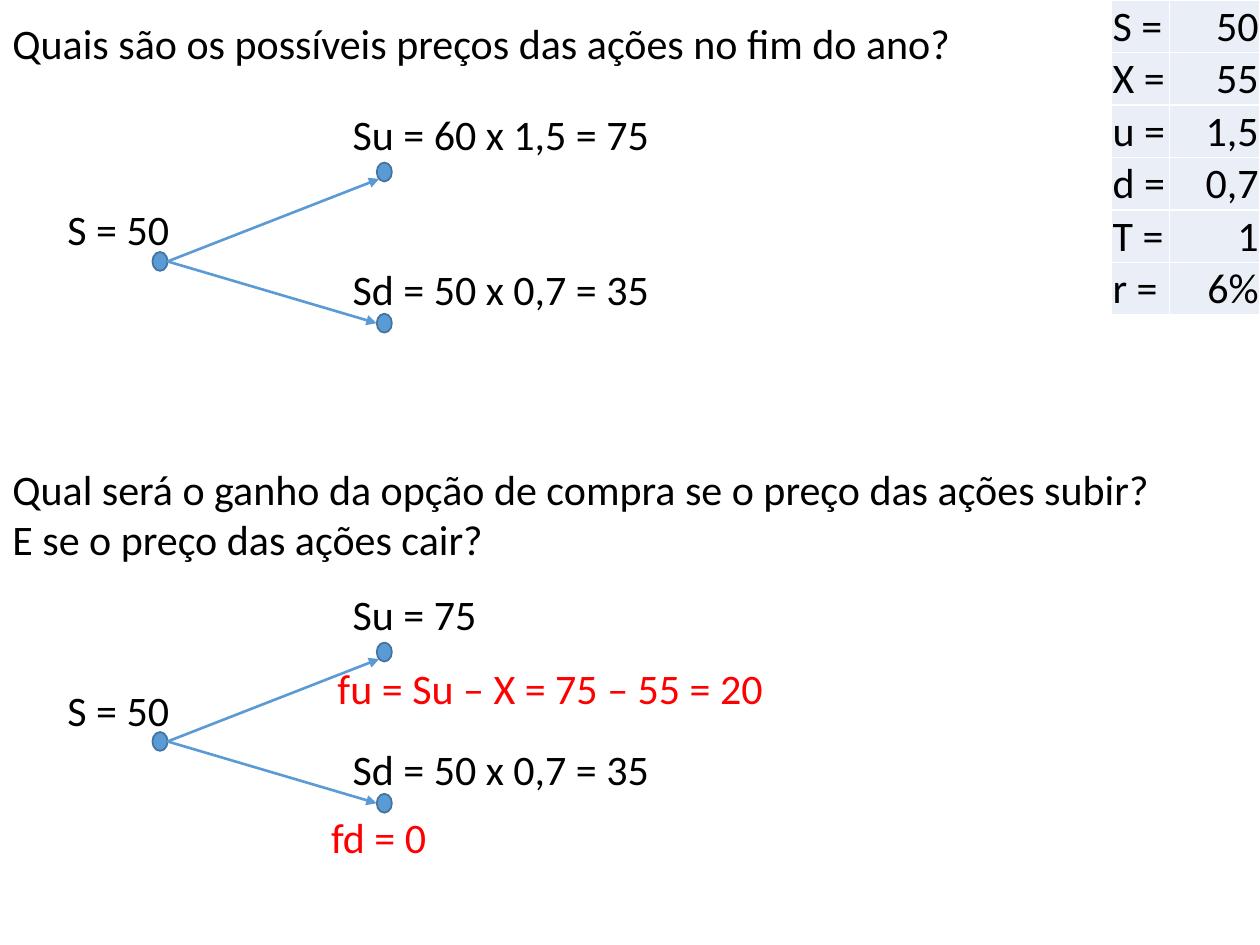
"""Build the slide on one-step binomial trees for share prices and call payoffs."""
import pptx
import pptx.dml.color
import pptx.enum.shapes
import pptx.enum.text
import pptx.oxml
import pptx.oxml.ns
import pptx.util

Inches, Pt = pptx.util.Inches, pptx.util.Pt
RGB = pptx.dml.color.RGBColor.from_string
ALIGN = pptx.enum.text.PP_ALIGN
SHAPE = pptx.enum.shapes.MSO_SHAPE

THEME = {
    "font": "Calibri", "size": 24, "text": "000000", "payoff": "FF0000",
    "node": "5B9BD5", "node_line": "43739E", "cell": "EAEFF7", "border": "FFFFFF",
}

PARAMETERS = [("S =", "50"), ("X =", "55"), ("u =", "1,5"),
              ("d =", "0,7"), ("T =", "1"), ("r =", "6%")]
QUESTIONS = [
    ("Quais são os possíveis preços das ações no fim do ano?", (0, 0.09, 8.29, 0.5)),
    ("Qual será o ganho da opção de compra se o preço das ações subir? "
     "E se o preço das ações cair?", (0, 3.63, 9.3, 0.91)),
]
TREES = [
    (0, "S = 50", "Su = 60 x 1,5 = 75", "Sd = 50 x 0,7 = 35"),
    (3.81, "S = 50", "Su = 75", "Sd = 50 x 0,7 = 35"),
]
PAYOFFS = [
    ("fu = Su – X = 75 – 55 = 20", (2.58, 5.21, 3.89, 0.5)),
    ("fd = 0", (2.53, 6.39, 1.29, 0.5)),
]

NODE = (0.12, 0.15)
ROOT, UP, DOWN = (1.21, 2), (2.99, 1.29), (2.99, 2.49)
COLUMNS = (0.46, 0.72)
ROW_HEIGHT = 0.41


def inches(values):
    return [Inches(v) for v in values]


def write(tf, text, color=THEME["text"], align=ALIGN.LEFT):
    tf.text = text
    p = tf.paragraphs[0]
    p.alignment = align
    font = p.runs[0].font
    font.name, font.size = THEME["font"], Pt(THEME["size"])
    font.color.rgb = RGB(color)


def add_text(s, text, box, **style):
    tf = s.shapes.add_textbox(*inches(box)).text_frame
    tf.word_wrap = True
    write(tf, text, **style)


def add_node(s, corner):
    sp = s.shapes.add_shape(SHAPE.OVAL, *inches(corner + NODE))
    sp.shadow.inherit = False
    sp.fill.solid()
    sp.fill.fore_color.rgb = RGB(THEME["node"])
    sp.line.color.rgb = RGB(THEME["node_line"])
    sp.line.width = Pt(1)


def add_arrow(s, start, end):
    line = s.shapes.add_connector(
        pptx.enum.shapes.MSO_CONNECTOR.STRAIGHT, *inches(start + end))
    line.line.color.rgb = RGB(THEME["node"])
    line.line.width = Pt(1.5)
    ln = line.line._get_or_add_ln()
    ns = pptx.oxml.ns.nsdecls("a")
    ln.append(pptx.oxml.parse_xml(f'<a:tailEnd {ns} type="triangle"/>'))
    ln.addnext(pptx.oxml.parse_xml(f"<a:effectLst {ns}/>"))


def add_tree(s, dy, root, up, down):
    for x, y in (ROOT, UP, DOWN):
        add_node(s, (x, y + dy))
    start = (ROOT[0] + NODE[0], ROOT[1] + NODE[1] / 2 + dy)
    add_arrow(s, start, (UP[0] + 0.02, UP[1] + 0.13 + dy))
    add_arrow(s, start, (DOWN[0], DOWN[1] + NODE[1] / 2 + dy))
    add_text(s, up, (2.7, 0.81 + dy, 2.79, 0.5))
    add_text(s, down, (2.7, 2.04 + dy, 2.79, 0.5))
    add_text(s, root, (0.32, 1.57 + dy, 1.12, 0.5), align=ALIGN.RIGHT)


def add_borders(cell):
    tcPr = cell._tc.get_or_add_tcPr()
    ns = pptx.oxml.ns.nsdecls("a")
    for side in "LRTB":
        tcPr.append(pptx.oxml.parse_xml(
            f'<a:ln{side} {ns} w="{Pt(1)}"><a:solidFill>'
            f'<a:srgbClr val="{THEME["border"]}"/></a:solidFill></a:ln{side}>'))


def add_parameters(s):
    rows = len(PARAMETERS)
    box = (10 - sum(COLUMNS), 0, sum(COLUMNS), rows * ROW_HEIGHT)
    table = s.shapes.add_table(rows, len(COLUMNS), *inches(box)).table
    table.first_row = table.horz_banding = False
    for column, width in zip(table.columns, COLUMNS):
        column.width = Inches(width)
    for i, row in enumerate(PARAMETERS):
        for j, text in enumerate(row):
            cell = table.cell(i, j)
            cell.margin_left = cell.margin_right = cell.margin_top = Inches(0.01)
            cell.margin_bottom = 0
            cell.vertical_anchor = pptx.enum.text.MSO_ANCHOR.BOTTOM
            add_borders(cell)
            cell.fill.solid()
            cell.fill.fore_color.rgb = RGB(THEME["cell"])
            write(cell.text_frame, text, align=(ALIGN.LEFT, ALIGN.RIGHT)[j])


def main():
    prs = pptx.Presentation()
    prs.slide_width, prs.slide_height = Inches(10), Inches(7.5)
    s = prs.slides.add_slide(prs.slide_layouts[6])
    add_parameters(s)
    for text, box in QUESTIONS:
        add_text(s, text, box)
    for tree in TREES:
        add_tree(s, *tree)
    for text, box in PAYOFFS:
        add_text(s, text, box, color=THEME["payoff"])
    prs.save("out.pptx")


if __name__ == "__main__":
    main()
